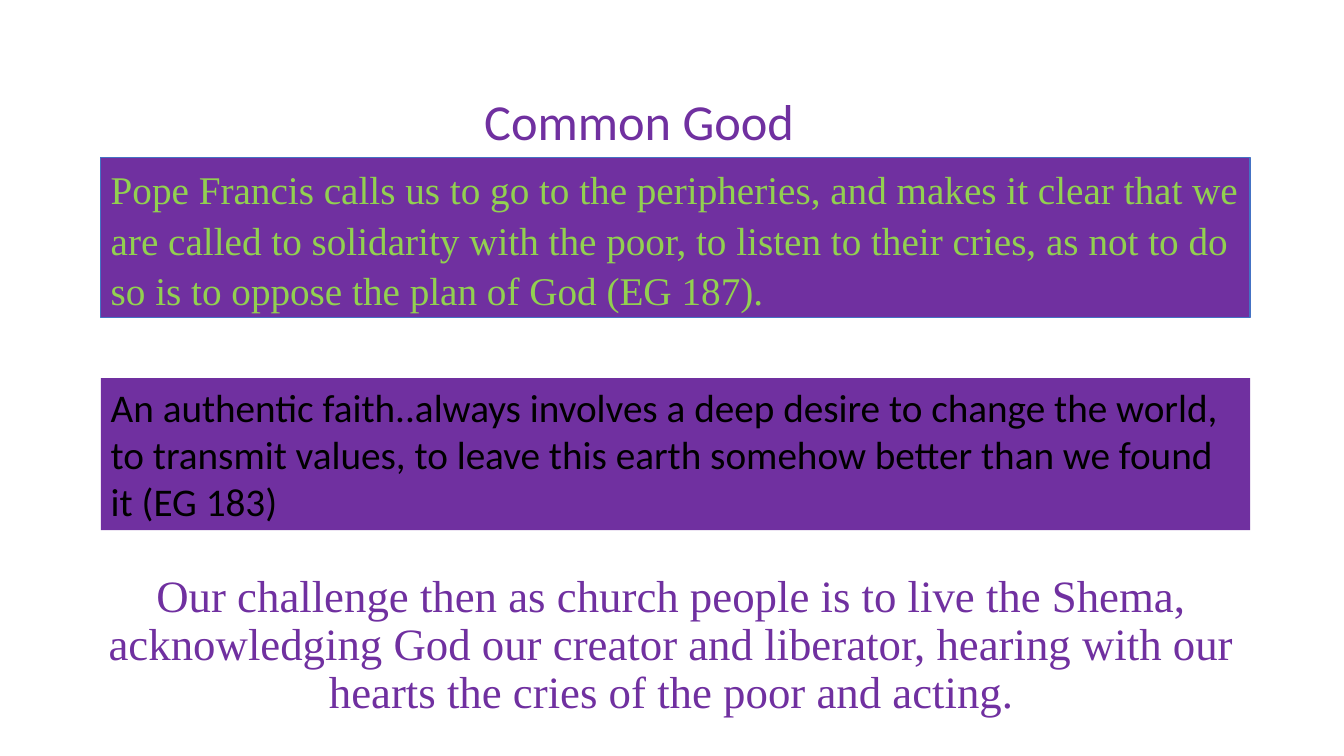
from pptx import Presentation
from pptx.dml.color import RGBColor
from pptx.enum.shapes import MSO_SHAPE
from pptx.enum.text import MSO_ANCHOR, MSO_AUTO_SIZE, PP_ALIGN
from pptx.util import Pt

PX = 9144  # EMU per px, 100 px to the inch
PAGE_SIZE = (1333, 750)

PURPLE = RGBColor(0x70, 0x30, 0xA0)
GREEN = RGBColor(0x92, 0xD0, 0x50)
BLUE = RGBColor(0x44, 0x72, 0xC4)
BLACK = RGBColor(0x00, 0x00, 0x00)

SERIF = "Times New Roman"
SANS = "Calibri"

RECTANGLE = MSO_SHAPE.RECTANGLE
TOP, BOTTOM = MSO_ANCHOR.TOP, MSO_ANCHOR.BOTTOM
LEFT, CENTER = PP_ALIGN.LEFT, PP_ALIGN.CENTER
NO_FIT, GROW = MSO_AUTO_SIZE.NONE, MSO_AUTO_SIZE.SHAPE_TO_FIT_TEXT

PANEL_LEFT, PANEL_WIDTH = 100, 1140


def set_all(target, values):
    for name, value in values.items():
        setattr(target, name, value)


def write(shape, text, font, size, color, frame_format, para_format):
    frame = shape.text_frame
    set_all(frame, {"word_wrap": True, **frame_format})
    para = frame.paragraphs[0]
    set_all(para, para_format)
    span = para.add_run()
    span.text = text
    set_all(span.font, {"name": font, "size": Pt(size), "bold": False})
    span.font.color.rgb = color


def place_heading(holder, box, text, font, size, anchor, before):
    """Fill a centred placeholder within the given box."""
    left, top, width, height = (length * PX for length in box)
    set_all(holder, {"left": left, "top": top, "width": width, "height": height})
    write(holder, text, font, size, PURPLE,
          {"vertical_anchor": anchor, "auto_size": NO_FIT},
          {"alignment": CENTER, "line_spacing": 0.9, "space_before": Pt(before)})


def add_quote(page, box, text, font, color, border=None, spacing=1.0, after=0):
    """Add a purple quotation panel within the given box."""
    panel = page.shapes.add_shape(RECTANGLE, *(length * PX for length in box))
    panel.shadow.inherit = False
    panel.fill.solid()
    panel.fill.fore_color.rgb = PURPLE
    if border is None:
        panel.line.fill.background()
    else:
        panel.line.color.rgb = border
        panel.line.width = Pt(1)
    write(panel, text, font, 28, color,
          {"vertical_anchor": TOP, "auto_size": GROW},
          {"alignment": LEFT, "line_spacing": spacing, "space_after": Pt(after)})


def build_page(deck):
    page = deck.slides.add_slide(deck.slide_layouts[0])

    # Closing challenge and heading
    place_heading(
        page.shapes.title, (79, 535, 1174, 183),
        "Our challenge then as church people is to live the Shema, "
        "acknowledging God our creator and liberator, hearing with our "
        "hearts the cries of the poor and acting.",
        SERIF, 32, BOTTOM, 0)
    place_heading(page.placeholders[1], (153, 91, 962, 66),
                  "Common Good", SANS, 36, TOP, 10)

    # Quotations
    add_quote(
        page, (PANEL_LEFT, 156, PANEL_WIDTH, 159),
        "Pope Francis calls us to go to the peripheries, and makes it clear "
        "that we are called to solidarity with the poor, to listen to their "
        "cries, as not to do so is to oppose the plan of God (EG 187).",
        SERIF, GREEN, border=BLUE, spacing=1.07, after=8)
    add_quote(
        page, (PANEL_LEFT, 375, PANEL_WIDTH, 151),
        "An authentic faith..always involves a deep desire to change the "
        "world, to transmit values, to leave this earth somehow better than "
        "we found it (EG 183)",
        SANS, BLACK)


def main():
    deck = Presentation()
    deck.slide_width, deck.slide_height = (length * PX for length in PAGE_SIZE)
    build_page(deck)
    deck.save("out.pptx")


if __name__ == "__main__":
    main()
